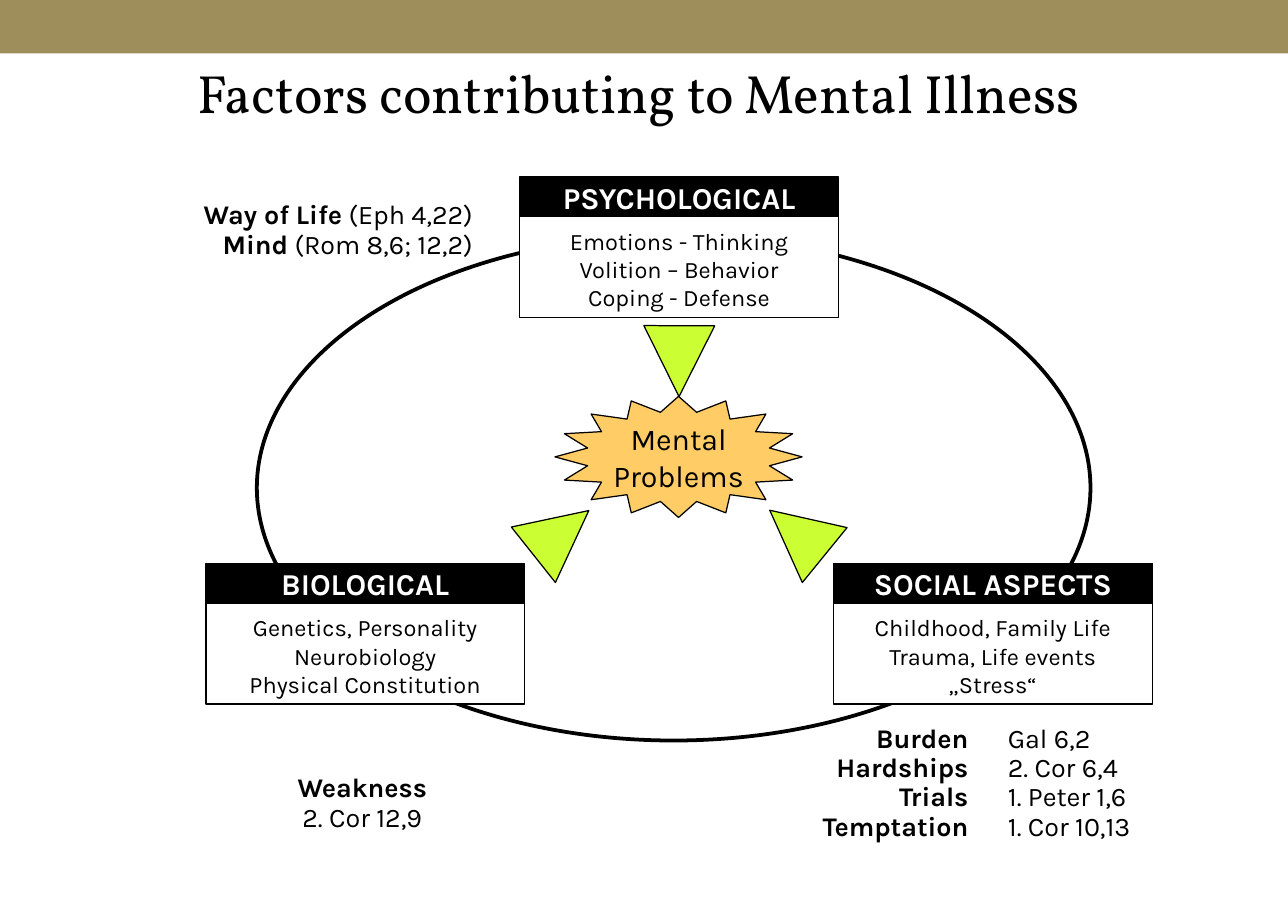
from dataclasses import dataclass

from pptx import Presentation
from pptx import util as u
from pptx.dml.color import RGBColor
from pptx.enum import shapes, text

SLIDE_WIDTH, SLIDE_HEIGHT = u.Inches(10.63), u.Inches(7.5)
COLUMN, ROW = SLIDE_WIDTH / 100, SLIDE_HEIGHT / 100
LEFT, CENTER, RIGHT = text.PP_ALIGN.LEFT, text.PP_ALIGN.CENTER, text.PP_ALIGN.RIGHT
TOP, MIDDLE, BOTTOM = text.MSO_ANCHOR.TOP, text.MSO_ANCHOR.MIDDLE, text.MSO_ANCHOR.BOTTOM
SHAPE = shapes.MSO_SHAPE


@dataclass(frozen=True)
class Theme:
    title_font: str = "Vollkorn"
    body_font: str = "Karla"
    ink: str = "000000"
    paper: str = "FFFFFF"
    band: str = "9E8E5C"
    star: str = "FFCC66"
    pointer: str = "CCFF33"
    title_size: int = 32
    heading_size: int = 18
    verse_size: int = 16
    detail_size: int = 14
    verse_pitch: float = 17.5
    thin: float = 0.75
    thick: float = 2.25


THEME = Theme()

# Heading, left column, top row, details
FACTORS = [
    ("PSYCHOLOGICAL", 40.36, 19.47,
     ["Emotions - Thinking", "Volition – Behavior", "Coping - Defense"]),
    ("SOCIAL ASPECTS", 64.72, 62,
     ["Childhood, Family Life", "Trauma, Life events", "„Stress“"]),
    ("BIOLOGICAL", 15.99, 62,
     ["Genetics, Personality", "Neurobiology", "Physical Constitution"]),
]
# Middle column, middle row, rotation
POINTERS = [(43.56, 58.6, 51.5), (61.9, 58.6, 309.2), (52.73, 39.73, 180.2)]
# Area, alignment, lines of (bold part, plain part)
VERSES = [
    ((61.9, 79.2, 14.21, 13.87), RIGHT,
     [("Burden", ""), ("Hardships", ""), ("Trials", ""), ("Temptation", "")]),
    ((77.33, 79.2, 13.64, 13.87), LEFT,
     [("", "Gal 6,2"), ("", "2. Cor 6,4"), ("", "1. Peter 1,6"), ("", "1. Cor 10,13")]),
    ((21.73, 85, 12.79, 6.67), CENTER, [("Weakness", ""), ("", "2. Cor 12,9")]),
    ((12.98, 22, 24.65, 6.67), RIGHT,
     [("Way of Life", " (Eph 4,22)"), ("Mind", " (Rom 8,6; 12,2)")]),
]


def place(left, top, width, height):
    """Turn columns and rows into slide lengths."""
    return [round(n) for n in (left * COLUMN, top * ROW, width * COLUMN, height * ROW)]


def write(box, lines, size, font=THEME.body_font, color=THEME.ink,
          align=CENTER, anchor=MIDDLE, pitch=None, wrap=True):
    """Fill a box with lines, each a pair of a bold part and a plain part."""
    frame = box.text_frame
    frame.word_wrap = wrap
    frame.vertical_anchor = anchor
    for index, line in enumerate(lines):
        para = frame.add_paragraph() if index else frame.paragraphs[0]
        para.alignment = align
        if pitch:
            para.line_spacing = u.Pt(pitch)
        for part, bold in zip(line, (True, False)):
            if part:
                span = para.add_run()
                span.text = part
                span.font.name = font
                span.font.size = u.Pt(size)
                span.font.bold = bold
                span.font.color.rgb = RGBColor.from_string(color)


def plain(lines):
    return [("", line) for line in lines]


def add_figure(page, kind, area, fill=None, line_width=None, rotation=0):
    figure = page.shapes.add_shape(kind, *place(*area))
    figure.shadow.inherit = False
    figure.rotation = rotation
    if fill:
        figure.fill.solid()
        figure.fill.fore_color.rgb = RGBColor.from_string(fill)
    else:
        figure.fill.background()
    if line_width:
        figure.line.color.rgb = RGBColor.from_string(THEME.ink)
        figure.line.width = u.Pt(line_width)
    else:
        figure.line.fill.background()
    return figure


def add_text(page, area, lines, size, **style):
    write(page.shapes.add_textbox(*place(*area)), lines, size, **style)


def add_factor(page, heading, left, top, details):
    """Add a detail box whose upper edge lies under a dark heading bar."""
    width = 24.74
    body = add_figure(page, SHAPE.RECTANGLE, (left, top + 2.13, width, 13.33),
                      THEME.paper, THEME.thin)
    write(body, plain(details), THEME.detail_size, anchor=BOTTOM)
    bar = add_figure(page, SHAPE.RECTANGLE, (left, top, width, 4.4), THEME.ink, THEME.thin)
    write(bar, [(heading, "")], THEME.heading_size, color=THEME.paper)


def add_pointer(page, middle, row, rotation):
    width, height = 5.5, 7.8
    add_figure(page, SHAPE.ISOSCELES_TRIANGLE,
               (middle - width / 2, row - height / 2, width, height),
               THEME.pointer, THEME.thin, rotation)


def main():
    deck = Presentation()
    deck.slide_width, deck.slide_height = SLIDE_WIDTH, SLIDE_HEIGHT
    page = deck.slides.add_slide(deck.slide_layouts[6])

    add_figure(page, SHAPE.RECTANGLE, (0, 0, 100, 5.87), THEME.band)
    add_figure(page, SHAPE.OVAL, (19.94, 25.87, 64.72, 55.6), line_width=THEME.thick)
    add_text(page, (14.39, 5.87, 71.68, 8.53),
             plain(["Factors contributing to Mental Illness"]), THEME.title_size,
             font=THEME.title_font, align=LEFT, anchor=TOP)
    for factor in FACTORS:
        add_factor(page, *factor)
    star = add_figure(page, SHAPE.STAR_16_POINT, (43.09, 43.6, 19.19, 13.33),
                      THEME.star, THEME.thin)
    write(star, plain(["Mental", "Problems"]), THEME.heading_size, wrap=False)
    for pointer in POINTERS:
        add_pointer(page, *pointer)
    for area, align, lines in VERSES:
        add_text(page, area, lines, THEME.verse_size, align=align, anchor=MIDDLE,
                 pitch=THEME.verse_pitch)

    deck.save("out.pptx")


if __name__ == "__main__":
    main()
